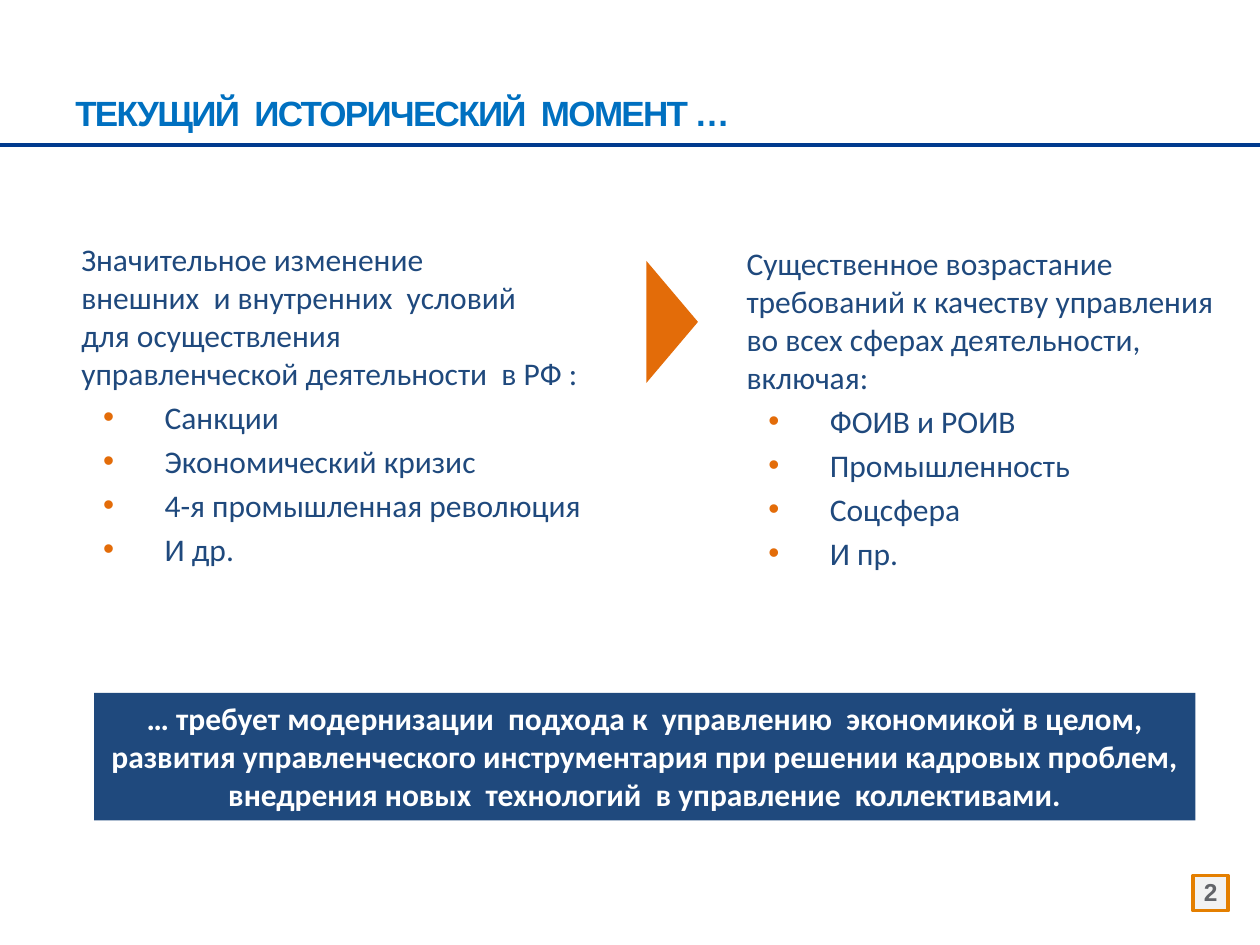
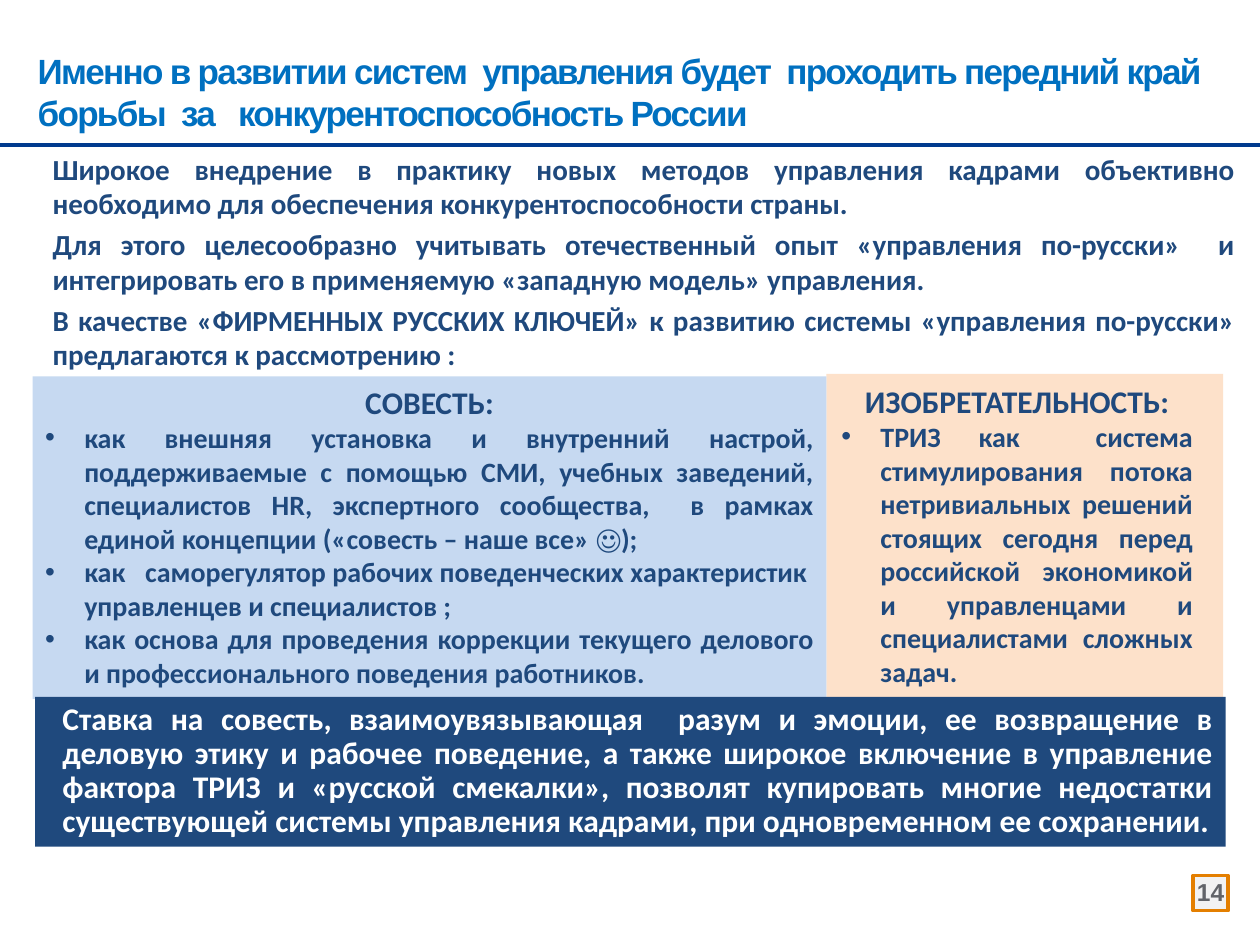
from lxml.etree import SubElement
from pptx import Presentation
from pptx.dml.color import RGBColor
from pptx.enum.shapes import MSO_CONNECTOR, MSO_SHAPE
from pptx.enum.text import MSO_ANCHOR as Anchor, PP_ALIGN as Align
from pptx.oxml.ns import qn
from pptx.util import Cm, Pt

# Shared look
NAVY, ORANGE, TITLE_BLUE, RULE_BLUE = "1F497D", "E36C09", "0070C0", "003A8E"
PALE_BLUE, PEACH, WHITE = "C6D9F1", "FDE1CA", "FFFFFF"
BADGE_FILL, BADGE_LINE, BADGE_TEXT = "F2F2F2", "E47F00", "626469"
SLIDE_WIDTH, SLIDE_HEIGHT, RULE_TOP = 25.4, 19.05, 2.92

# Run formats
TITLE = {"name": "Arial", "size": Pt(20), "bold": True}
BADGE = {"name": "Arial", "size": Pt(14), "bold": True}
PLAIN = {"name": "Calibri", "size": Pt(18), "bold": False}
STRONG = {**PLAIN, "bold": True}
THESIS = {**STRONG, "size": Pt(16.6)}
DETAIL = {**STRONG, "size": Pt(16)}

# Paragraph indents in cm: left margin, first line
LEAD_INDENT, LIST_INDENT, CARD_INDENT = (0.3, 0), (1.98, -1.24), (0.79, -0.79)


def rgb(color):
    return RGBColor.from_string(color)


def apply_format(target, values):
    for name, value in values.items():
        setattr(target, name, value)


def add_paragraph(frame, text, style, color=NAVY, align=Align.LEFT, indent=(0, 0),
                  bullet=None, gap=0.0, line_spacing=None):
    """Append a paragraph; gap is the space before, as a share of the text size."""
    first = not frame.text
    paragraph = frame.paragraphs[0] if first else frame.add_paragraph()
    paragraph.text = text
    apply_format(paragraph, {
        "alignment": align,
        "line_spacing": line_spacing,
        "space_before": Pt(0 if first else round(gap * style["size"].pt, 1)),
    })
    properties = paragraph._p.get_or_add_pPr()
    properties.set("marL", str(Cm(indent[0])))
    properties.set("indent", str(Cm(indent[1])))
    if bullet:
        bullet_color = SubElement(properties, qn("a:buClr"))
        SubElement(bullet_color, qn("a:srgbClr"), val=bullet)
        SubElement(properties, qn("a:buFont"), typeface="Arial")
        SubElement(properties, qn("a:buChar"), char="•")
    for run in paragraph.runs:
        apply_format(run.font, style)
        run.font.color.rgb = rgb(color)
    return paragraph


def add_text_box(slide, box, anchor=Anchor.TOP):
    frame = slide.shapes.add_textbox(*map(Cm, box)).text_frame
    apply_format(frame, {"word_wrap": True, "vertical_anchor": anchor})
    return frame


def add_panel(slide, box, fill, line=None, kind=MSO_SHAPE.RECTANGLE):
    shape = slide.shapes.add_shape(kind, *map(Cm, box))
    shape.shadow.inherit = False
    shape.fill.solid()
    shape.fill.fore_color.rgb = rgb(fill)
    if line:
        shape.line.color.rgb = rgb(line)
        shape.line.width = Pt(2)
    else:
        shape.line.fill.background()
    apply_format(shape.text_frame, {"word_wrap": True, "vertical_anchor": Anchor.TOP})
    return shape


def add_rule(slide):
    rule = slide.shapes.add_connector(
        MSO_CONNECTOR.STRAIGHT, 0, Cm(RULE_TOP), Cm(SLIDE_WIDTH), Cm(RULE_TOP))
    rule.line.color.rgb = rgb(RULE_BLUE)
    rule.line.width = Pt(2.5)
    SubElement(rule._element.spPr, qn("a:effectLst"))


def add_page_badge(slide, number):
    frame = add_panel(slide, (24.05, 17.65, 0.71, 0.71), BADGE_FILL, BADGE_LINE).text_frame
    margins = {f"margin_{side}": Cm(0.2) for side in ("left", "right", "top", "bottom")}
    apply_format(frame, {**margins, "word_wrap": False, "vertical_anchor": Anchor.MIDDLE})
    add_paragraph(frame, str(number), BADGE, BADGE_TEXT, Align.CENTER, line_spacing=0.9)


def add_title(slide, text, left, width):
    frame = add_text_box(slide, (left, 0.66, width, 2.16), Anchor.BOTTOM)
    for run in add_paragraph(frame, text, TITLE, TITLE_BLUE).runs:
        run.font._element.set("spc", "-100")


def add_list_column(slide, box, lead, items):
    frame = add_text_box(slide, box)
    add_paragraph(frame, lead, PLAIN, indent=LEAD_INDENT)
    for item in items:
        add_paragraph(frame, item, PLAIN, indent=LIST_INDENT, bullet=ORANGE, gap=0.2)


def fill_card(frame, heading, items):
    add_paragraph(frame, heading, STRONG, align=Align.CENTER)
    for item in items:
        add_paragraph(frame, item, DETAIL, align=Align.JUSTIFY,
                      indent=CARD_INDENT, bullet=NAVY)


def new_slide(presentation, number):
    slide = presentation.slides.add_slide(presentation.slide_layouts[6])
    add_rule(slide)
    add_page_badge(slide, number)
    return slide


def build_moment_slide(presentation):
    slide = new_slide(presentation, 2)
    add_title(slide, "ТЕКУЩИЙ  ИСТОРИЧЕСКИЙ  МОМЕНТ …", 1.27, 22.23)

    # Causes on the left, consequences on the right
    add_list_column(
        slide, (14.5, 4.8, 10.39, 8.48),
        "Существенное возрастание требований к качеству управления "
        "во всех сферах деятельности, включая:",
        ["ФОИВ и РОИВ", "Промышленность", "Соцсфера", "И пр."])
    add_list_column(
        slide, (1.09, 4.72, 11.4, 9.19),
        "Значительное изменение \nвнешних  и внутренних  условий \n"
        "для осуществления \nуправленческой деятельности  в РФ :",
        ["Санкции", "Экономический кризис", "4-я промышленная революция", "И др."])

    # Conclusion band
    band = add_panel(slide, (1.9, 13.97, 22.2, 2.57), NAVY)
    for line in (
        "… требует модернизации  подхода к  управлению  экономикой в целом,",
        "развития управленческого инструментария при решении кадровых проблем,",
        "внедрения новых  технологий  в управление  коллективами.",
    ):
        add_paragraph(band.text_frame, line, STRONG, WHITE, Align.CENTER)

    # Pointer between the columns
    pointer = add_panel(slide, (12.32, 5.97, 2.46, 1.04), ORANGE,
                        kind=MSO_SHAPE.ISOSCELES_TRIANGLE)
    pointer.rotation = 90


def build_keys_slide(presentation):
    slide = new_slide(presentation, 14)
    add_panel(slide, (16.66, 7.54, 8, 7.14), PEACH)
    add_title(slide, "Именно в развитии систем  управления будет  проходить передний край "
                     "борьбы  за   конкурентоспособность России", 0.51, 24.61)

    # Theses
    theses = add_text_box(slide, (0.51, RULE_TOP, 24.61, 4.67))
    for thesis in (
        "Широкое внедрение в практику новых методов управления кадрами объективно "
        "необходимо для обеспечения конкурентоспособности страны.",
        "Для этого целесообразно учитывать отечественный опыт «управления по-русски»  и "
        "интегрировать его в применяемую «западную модель» управления.",
        "В качестве «ФИРМЕННЫХ РУССКИХ КЛЮЧЕЙ» к развитию системы «управления по-русски» "
        "предлагаются к рассмотрению :",
    ):
        add_paragraph(theses, thesis, THESIS, align=Align.JUSTIFY,
                      indent=LEAD_INDENT, gap=0.2)

    # Two keys
    conscience = add_panel(slide, (0.66, 7.59, 16, 6.5), PALE_BLUE)
    fill_card(conscience.text_frame, "СОВЕСТЬ:", [
        "как внешняя установка и внутренний настрой, поддерживаемые с помощью СМИ, "
        "учебных заведений, специалистов HR, экспертного сообщества,  в рамках единой "
        "концепции («совесть – наше все» ☺);",
        "как   саморегулятор рабочих поведенческих характеристик  управленцев "
        "и специалистов ;",
        "как основа для проведения коррекции текущего делового и профессионального "
        "поведения работников.",
    ])

    # Conclusion band
    band = add_panel(slide, (0.71, 14.05, 24, 3.02), NAVY)
    add_paragraph(
        band.text_frame,
        "Ставка на совесть, взаимоувязывающая  разум и эмоции, ее возвращение в деловую "
        "этику и рабочее поведение, а также широкое включение в управление фактора ТРИЗ "
        "и «русской смекалки», позволят купировать многие недостатки существующей "
        "системы управления кадрами, при одновременном ее сохранении.",
        STRONG, WHITE, Align.JUSTIFY, LEAD_INDENT, line_spacing=0.9)

    ingenuity = add_text_box(slide, (16.71, 7.57, 7.59, 6.5))
    fill_card(ingenuity, "ИЗОБРЕТАТЕЛЬНОСТЬ:", [
        "ТРИЗ как  система стимулирования потока нетривиальных решений стоящих сегодня "
        "перед российской экономикой и управленцами и специалистами сложных задач.",
    ])


def main():
    presentation = Presentation()
    apply_format(presentation, {"slide_width": Cm(SLIDE_WIDTH),
                                "slide_height": Cm(SLIDE_HEIGHT)})
    build_moment_slide(presentation)
    build_keys_slide(presentation)
    presentation.save("out.pptx")


if __name__ == "__main__":
    main()
